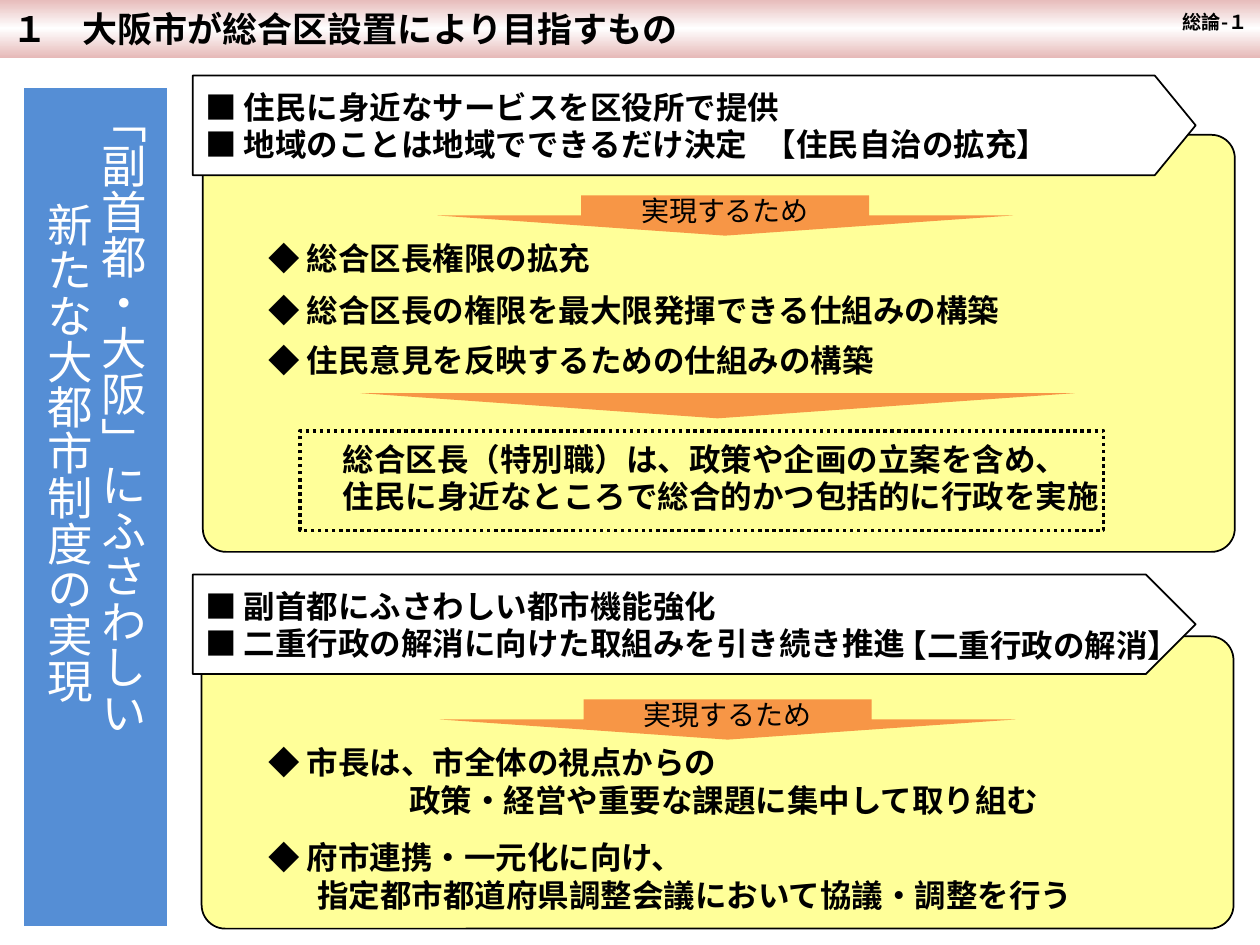
from copy import deepcopy

from pptx import Presentation
from pptx.dml.color import RGBColor
from pptx.enum.dml import MSO_LINE
from pptx.enum.shapes import MSO_SHAPE
from pptx.enum.text import MSO_ANCHOR, PP_ALIGN
from pptx.oxml.ns import qn
from pptx.util import Inches, Pt

RECT, ROUND = MSO_SHAPE.RECTANGLE, MSO_SHAPE.ROUNDED_RECTANGLE
BANNER, DOWN = MSO_SHAPE.RIGHT_ARROW, MSO_SHAPE.DOWN_ARROW
TRIANGLE = MSO_SHAPE.ISOSCELES_TRIANGLE
TOP, MIDDLE = MSO_ANCHOR.TOP, MSO_ANCHOR.MIDDLE
LEFT, CENTER, RIGHT = PP_ALIGN.LEFT, PP_ALIGN.CENTER, PP_ALIGN.RIGHT
DOTTED = MSO_LINE.ROUND_DOT
FONT = "Noto Sans CJK JP"
ORANGE, YELLOW, BLACK, WHITE = "F79646", "FFFF99", "000000", "FFFFFF"


def add_figure(kind, place, fill=None, line=None, width=1, adjust=()):
    """Add a preset shape; no fill or line colour means none is drawn."""
    figure = page.shapes.add_shape(kind, *map(Inches, place))
    figure.shadow.inherit = False
    for number, value in enumerate(adjust):
        figure.adjustments[number] = value
    if fill:
        figure.fill.solid()
        figure.fill.fore_color.rgb = RGBColor.from_string(fill)
    else:
        figure.fill.background()
    if line:
        figure.line.color.rgb = RGBColor.from_string(line)
        figure.line.width = Pt(width)
    else:
        figure.line.fill.background()
    return figure


def write(box, lines, size=18, bold=True, color=BLACK, align=LEFT,
          anchor=MIDDLE, indents=(0, 0), margins=(0.1, 0.05)):
    """Write one paragraph per line, each with its own left indent."""
    frame = box.text_frame
    side, edge = map(Inches, margins)
    layout = {"word_wrap": True, "vertical_anchor": anchor,
              "margin_left": side, "margin_right": side,
              "margin_top": edge, "margin_bottom": edge}
    for name, value in layout.items():
        setattr(frame, name, value)
    for number, (line, indent) in enumerate(zip(lines, indents)):
        para = frame.paragraphs[0] if number == 0 else frame.add_paragraph()
        para.alignment = align
        if indent:
            para._p.get_or_add_pPr().set("marL", str(Inches(indent)))
        span = para.add_run()
        span.text = line
        for name, value in {"size": Pt(size), "bold": bold, "name": FONT}.items():
            setattr(span.font, name, value)
        span.font.color.rgb = RGBColor.from_string(color)
        east_asian = span._r.get_or_add_rPr().makeelement(qn("a:ea"), {"typeface": FONT})
        span.font._element.find(qn("a:latin")).addnext(east_asian)


deck = Presentation()
deck.slide_width, deck.slide_height = Inches(10), Inches(7.5)
page = deck.slides.add_slide(deck.slide_layouts[6])

# Title bar, pink fading to white in the middle
title = add_figure(RECT, (0, -0.01, 10, 0.47))
title.fill.gradient()
title.fill.gradient_angle = 270
first_stop = title.fill.gradient_stops[0]._gs
first_stop.addnext(deepcopy(first_stop))
for stop, (position, color) in zip(
        title.fill.gradient_stops, [(0, "E6B9B8"), (0.5, WHITE), (1, "E6B9B8")]):
    stop.position = position
    stop.color.rgb = RGBColor.from_string(color)
write(title, ["１　大阪市が総合区設置により目指すもの"], size=20)

# Vertical goal on the left
goal = add_figure(RECT, (0.17, 0.68, 1.18, 6.69), "558ED5", WHITE, 3)
write(goal, ["「副首都・大阪」にふさわしい", "新たな大都市制度の実現"],
      size=26, bold=False, color=WHITE, align=CENTER, indents=(0, 0.57))
goal.text_frame._txBody.bodyPr.set("vert", "eaVert")

# Yellow panels
add_figure(ROUND, (1.6, 5.05, 8.19, 2.32), YELLOW, BLACK, adjust=[0.081])
add_figure(ROUND, (1.61, 1.07, 8.19, 3.31), YELLOW, BLACK, adjust=[0.056])

# Banner and "in order to realise" arrow of each panel
for top, point, arrow_left, arrow_top, lines in [
    (0.6, 0.41, 3.47, 1.55,
     ["■ 住民に身近なサービスを区役所で提供", "■ 地域のことは地域でできるだけ決定"]),
    (4.56, 0.5, 3.49, 5.55,
     ["■ 副首都にふさわしい都市機能強化", "■ 二重行政の解消に向けた取組みを引き続き推進"]),
]:
    banner = add_figure(BANNER, (1.53, top, 7.96, 0.79), WHITE, BLACK, adjust=[1, point])
    write(banner, lines)
    arrow = add_figure(DOWN, (arrow_left, arrow_top, 4.57, 0.32), ORANGE)
    write(arrow, ["実現するため"], size=16, bold=False, align=CENTER)

# Wedge and dotted frame around the conclusion
wedge = add_figure(TRIANGLE, (2.86, 3.12, 5.67, 0.2), ORANGE)
wedge.rotation = 180
frame = add_figure(RECT, (2.38, 3.42, 6.38, 0.79), line=BLACK, width=2)
frame.line.dash_style = DOTTED

# Free-standing texts: place, lines, format
narrow = {"anchor": TOP, "margins": (0.06, 0.05)}
for place, lines, style in [
    ((2.07, 1.85, 7.4, 0.39), ["◆ 総合区長権限の拡充"], narrow),
    ((2.07, 2.26, 7.4, 0.39), ["◆ 総合区長の権限を最大限発揮できる仕組みの構築"], narrow),
    ((2.07, 2.66, 7.4, 0.39), ["◆ 住民意見を反映するための仕組みの構築"], narrow),
    ((2.39, 3.44, 7.4, 0.94),
     ["総合区長（特別職）は、政策や企画の立案を含め、",
      "住民に身近なところで総合的かつ包括的に行政を実施"],
     {**narrow, "indents": (0.27, 0.27)}),
    ((2.03, 5.85, 7.72, 0.71),
     ["◆ 市長は、市全体の視点からの", "政策・経営や重要な課題に集中して取り組む"],
     {"anchor": TOP, "indents": (0, 1.12)}),
    ((2.03, 6.6, 7.72, 0.71),
     ["◆ 府市連携・一元化に向け、", "指定都市都道府県調整会議において協議・調整を行う"],
     {"anchor": TOP, "indents": (0, 0.39)}),
    ((5.97, 0.94, 2.99, 0.4), ["【住民自治の拡充】"], {}),
    ((7.01, 4.72, 2.99, 0.79), ["【二重行政の解消】"], {}),
    ((8.87, 0.03, 1.13, 0.29), ["総論-１"], {"size": 11, "align": RIGHT, "anchor": TOP}),
]:
    write(page.shapes.add_textbox(*map(Inches, place)), lines, **style)

deck.save("out.pptx")
